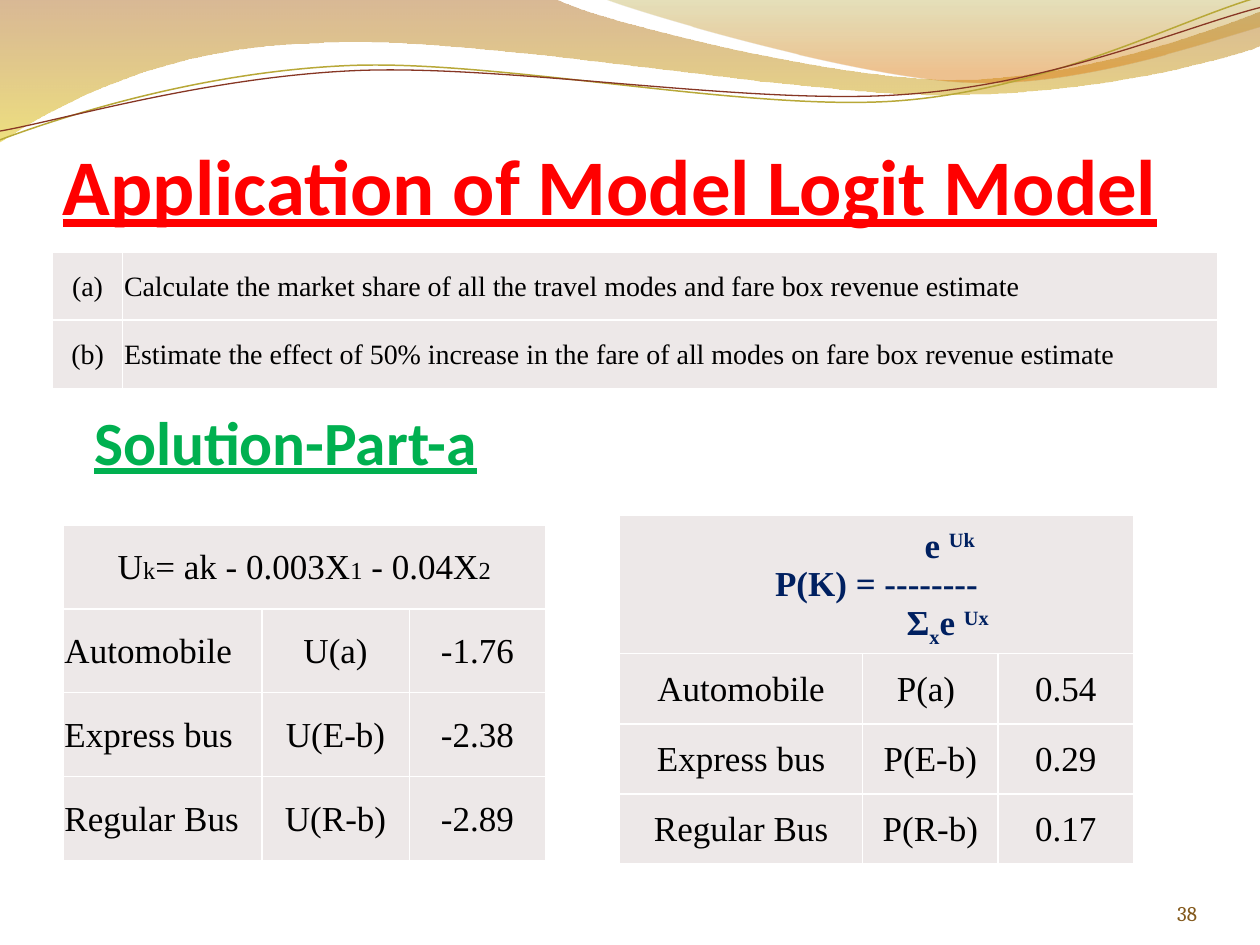
from dataclasses import dataclass
from math import cos, radians, sin
from typing import NamedTuple

from lxml.etree import SubElement
from pptx import Presentation
from pptx.dml.color import RGBColor
from pptx.enum.text import MSO_ANCHOR, PP_ALIGN
from pptx.oxml.ns import qn
from pptx.util import Cm, Pt


@dataclass(frozen=True)
class Theme:
    title: str = "FF0000"
    heading: str = "00B050"
    number: str = "83591C"
    body: str = "000000"
    formula: str = "002060"
    cell: str = "EDE8E8"
    border: str = "FFFFFF"
    left_wave: tuple = ((0, "AB6415", 45), (1, "E1C716", 55))
    right_wave: tuple = ((0, "AA991F", 30), (0.8, "DB780A", 45))
    gold_line: str = "B8A838"
    brown_line: str = "873624"
    title_size: float = 45
    heading_size: float = 35.1
    table_size: float = 20
    task_size: float = 16
    index_size: float = 14
    number_size: float = 12
    heading_font: str = "Calibri"
    table_font: str = "Times New Roman"
    number_font: str = "Cambria"


class Box(NamedTuple):
    left: float
    top: float
    width: float
    height: float


THEME = Theme()
LEFT, CENTER, RIGHT = PP_ALIGN.LEFT, PP_ALIGN.CENTER, PP_ALIGN.RIGHT
LINE_TILT = -2.7
LINE_PIVOT = (4.99, 0.58)

LEFT_WAVE = [
    (0, 0), (4.4, -0.01),
    (4.76, 0.17, 6.64, 0.63, 7.58, 0.63), (8.53, 0.63, 9.58, 0.26, 10, 0.09),
    (10.01, 0.36),
    (9.83, 0.44, 8.7, 0.76, 7.46, 0.75), (6.22, 0.75, 3.82, 0.28, 2.57, 0.34),
    (1.29, 0.36, 0.46, 0.83, -0.01, 1.13),
]
RIGHT_WAVE = [
    (4.79, -0.01),
    (5.09, 0.11, 6.82, 0.62, 7.69, 0.65), (8.56, 0.69, 9.61, 0.32, 10, 0.21),
    (10, 0),
]
GOLD_LINE = [
    (0, 1.11), (0.48, 0.93, 1.58, 0.57, 2.77, 0.52),
    (3.95, 0.47, 5.93, 0.89, 7.13, 0.8), (8.33, 0.71, 9.38, 0.15, 9.98, -0.02),
]
BROWN_LINE = [
    (0, 1.04), (0.47, 0.96, 1.64, 0.61, 2.83, 0.56),
    (4.03, 0.51, 5.97, 0.84, 7.17, 0.75), (8.36, 0.67, 9.41, 0.21, 10, 0.06),
]


def style(span, font, size, color, bold=False, underline=False):
    span.font.name = font
    span.font.size = Pt(size)
    span.font.color.rgb = RGBColor.from_string(color)
    span.font.bold = bold
    span.font.underline = underline


def turn(point, angle):
    x, y = point[0] - LINE_PIVOT[0], point[1] - LINE_PIVOT[1]
    c, s = cos(radians(angle)), sin(radians(angle))
    return LINE_PIVOT[0] + x * c - y * s, LINE_PIVOT[1] + x * s + y * c


def add_outline(page, box, outline, close, tilt=0):
    unit = Cm(box.width) / 10
    corners = [step[i:i + 2] for step in outline for i in range(0, len(step), 2)]
    points = [
        (Cm(box.left) + x * unit, Cm(box.top) + y * unit)
        for x, y in (turn(corner, -tilt) for corner in corners)
    ]
    builder = page.shapes.build_freeform(*points[0])
    builder.add_line_segments(points[1:], close=close)
    shape = builder.convert_to_shape()
    shape.rotation = tilt
    shape.shadow.inherit = False
    path_element = shape.element.spPr.find(".//" + qn("a:path"))
    segments = iter(path_element.findall(qn("a:lnTo")))
    for step in outline[1:]:
        segment = next(segments)
        if len(step) == 6:
            curve = path_element.makeelement(qn("a:cubicBezTo"))
            path_element.replace(segment, curve)
            curve.append(segment[0])
            for extra in (next(segments), next(segments)):
                curve.append(extra[0])
                path_element.remove(extra)
    return shape


def add_waves(page, box):
    for outline, stops in ((LEFT_WAVE, THEME.left_wave), (RIGHT_WAVE, THEME.right_wave)):
        wave = add_outline(page, box, outline, True)
        wave.line.fill.background()
        wave.fill.gradient()
        wave.fill.gradient_angle = 270
        for stop, (position, color, opacity) in zip(wave.fill.gradient_stops, stops):
            stop.position = position
            stop.color.rgb = RGBColor.from_string(color)
        colors = wave.element.spPr.findall(".//" + qn("a:gs") + "/" + qn("a:srgbClr"))
        for element, (position, color, opacity) in zip(colors, stops):
            SubElement(element, qn("a:alpha"), val=str(opacity * 1000))
    for outline, color, weight in (
        (GOLD_LINE, THEME.gold_line, 0.85), (BROWN_LINE, THEME.brown_line, 0.75),
    ):
        line = add_outline(page, box, outline, False, LINE_TILT)
        line.fill.background()
        line.line.color.rgb = RGBColor.from_string(color)
        line.line.width = Pt(weight)


def add_text(page, box, text, align, inset, **look):
    frame = page.shapes.add_textbox(*map(Cm, box)).text_frame
    frame.word_wrap = True
    frame.vertical_anchor = MSO_ANCHOR.BOTTOM
    frame.margin_left = frame.margin_right = frame.margin_bottom = 0
    frame.margin_top = Cm(inset)
    frame.text = text
    para = frame.paragraphs[0]
    para.alignment = align
    style(para.runs[0], **look)


def format_cell(cell):
    cell.margin_left = cell.margin_right = cell.margin_top = Cm(0.03)
    cell.margin_bottom = 0
    cell.vertical_anchor = MSO_ANCHOR.MIDDLE
    properties = cell._tc.get_or_add_tcPr()
    for side in ("lnL", "lnR", "lnT", "lnB"):
        line = SubElement(properties, qn(f"a:{side}"), w=str(Pt(1)))
        SubElement(SubElement(line, qn("a:solidFill")), qn("a:srgbClr"), val=THEME.border)
    cell.fill.solid()
    cell.fill.fore_color.rgb = RGBColor.from_string(THEME.cell)


def add_grid(page, box, columns, heights, rows, aligns, size):
    table = page.shapes.add_table(len(heights), len(columns), *map(Cm, box)).table
    table.first_row = table.horz_banding = False
    for column, width in zip(table.columns, columns):
        column.width = Cm(width)
    for row, height in zip(table.rows, heights):
        row.height = Cm(height)
    for cell in table.iter_cells():
        format_cell(cell)
    first = len(heights) - len(rows)
    if first:
        table.cell(0, 0).merge(table.cell(0, len(columns) - 1))
    for row_index, texts in enumerate(rows, first):
        for column_index, (text, align) in enumerate(zip(texts, aligns)):
            cell = table.cell(row_index, column_index)
            cell.text_frame.text = text
            para = cell.text_frame.paragraphs[0]
            para.alignment = align
            style(para.runs[0], THEME.table_font, size, THEME.body)
    return table


def add_tasks(page, box):
    rows = [
        ("(a)", "Calculate the market share of all the travel modes and fare box revenue estimate"),
        ("(b)", "Estimate the effect of 50% increase in the fare of all modes on fare box revenue estimate"),
    ]
    add_grid(page, box, (1.41, box.width - 1.41), [box.height / 2] * 2, rows,
             (CENTER, LEFT), THEME.task_size)


def add_utilities(page, box):
    rows = [("Automobile", "U(a)", "-1.76"), ("Express bus", "U(E-b)", "-2.38"),
            ("Regular Bus", "U(R-b)", "-2.89")]
    table = add_grid(page, box, (4.01, 2.97, 2.75), [box.height / 4] * 4, rows,
                     (LEFT, CENTER, CENTER), THEME.table_size)
    para = table.cell(0, 0).text_frame.paragraphs[0]
    para.alignment = CENTER
    for index, text in enumerate(("U", "k", "= ak - 0.003X", "1", " - 0.04X", "2")):
        span = para.add_run()
        span.text = text
        size = THEME.index_size if index % 2 else THEME.table_size
        style(span, THEME.table_font, size, THEME.body)


def add_shares(page, box):
    rows = [("Automobile", "P(a) ", "0.54"), ("Express bus", "P(E-b)", "0.29"),
            ("Regular Bus", "P(R-b)", "0.17")]
    header = 2.6
    table = add_grid(page, box, (4.9, 2.73, 2.73), [header] + [(box.height - header) / 3] * 3,
                     rows, (CENTER,) * 3, THEME.table_size)
    formula = [
        (2.95, [("e ", 0), ("Uk", 30)]),
        (0, [("P(K) = --------", 0)]),
        (2.87, [("Σ", 0), ("x", -25), ("e ", 0), ("Ux", 30)]),
    ]
    cell = table.cell(0, 0)
    cell.margin_top = Cm(0.13)
    for index, (indent, parts) in enumerate(formula):
        para = cell.text_frame.add_paragraph() if index else cell.text_frame.paragraphs[0]
        para.alignment = CENTER
        para._p.get_or_add_pPr().set("marL", str(Cm(indent)))
        for text, baseline in parts:
            span = para.add_run()
            span.text = text
            style(span, THEME.table_font, THEME.table_size, THEME.formula, bold=True)
            if baseline:
                span.font._element.set("baseline", str(baseline * 1000))


def main():
    deck = Presentation()
    deck.slide_width, deck.slide_height = Cm(25.4), Cm(19.05)
    page = deck.slides.add_slide(deck.slide_layouts[6])
    add_waves(page, Box(0, 0, 25.4, 2.87))
    add_text(page, Box(22.02, 17.65, 2.11, 1.02), "38", RIGHT, 0,
             font=THEME.number_font, size=THEME.number_size, color=THEME.number)
    add_text(page, Box(1.27, 1.48, 22.86, 3.18), "Application of Model Logit Model", LEFT, 0.13,
             font=THEME.heading_font, size=THEME.title_size, color=THEME.title,
             bold=True, underline=True)
    add_tasks(page, Box(1.06, 5.08, 23.49, 2.75))
    add_utilities(page, Box(1.27, 10.58, 9.73, 6.77))
    add_shares(page, Box(12.49, 10.39, 10.36, 6.84))
    add_text(page, Box(1.9, 8.06, 9.1, 1.57), "Solution-Part-a", LEFT, 0.13,
             font=THEME.heading_font, size=THEME.heading_size, color=THEME.heading,
             bold=True, underline=True)
    deck.save("out.pptx")


if __name__ == "__main__":
    main()
